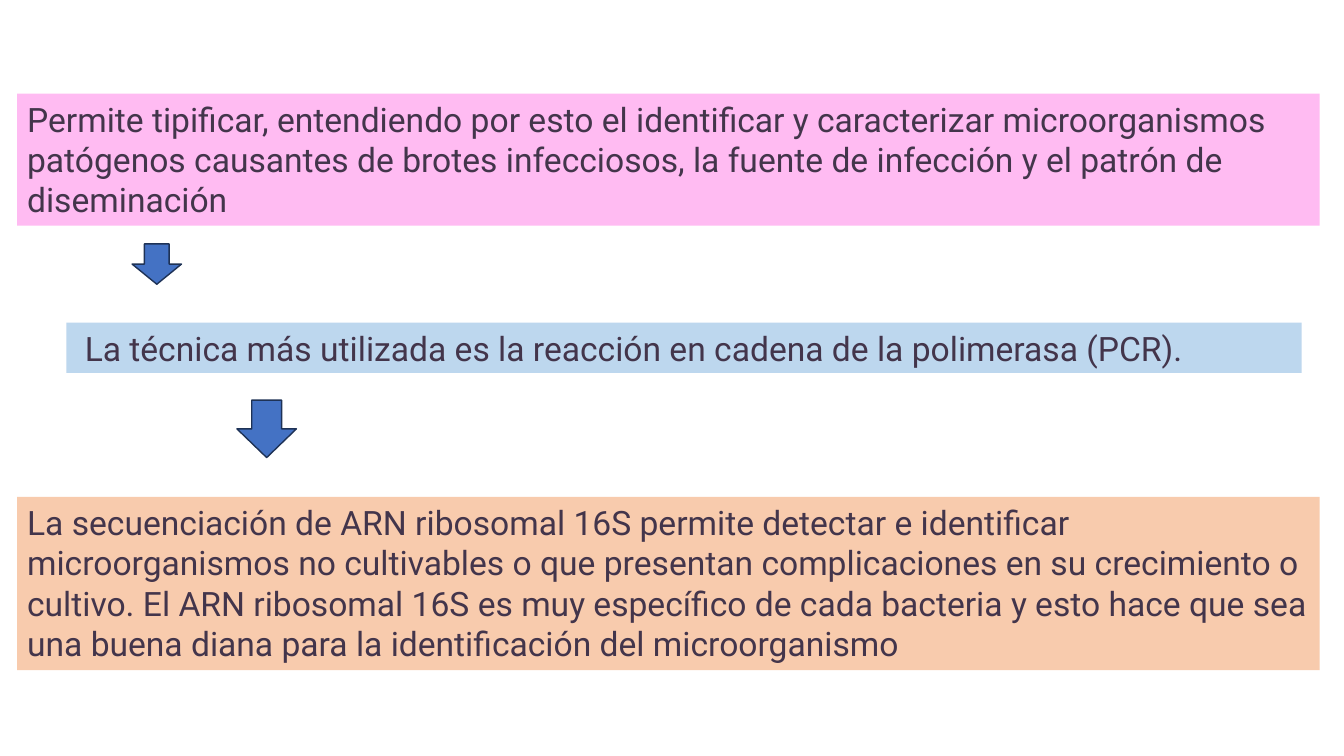
from dataclasses import dataclass

from pptx import Presentation
from pptx.dml.color import RGBColor
from pptx.enum.shapes import MSO_SHAPE
from pptx.enum.text import MSO_ANCHOR, MSO_AUTO_SIZE, PP_ALIGN
from pptx.util import Inches, Pt


@dataclass(frozen=True)
class Theme:
    pink: str = "FFBBF2"
    blue: str = "BDD7EE"
    peach: str = "F8CBAD"
    arrow: str = "4472C4"
    edge: str = "1E3256"
    ink: str = "43354B"
    font: str = "Roboto"
    size: int = 24


THEME = Theme()
WIDE, HIGH = Inches(13.33), Inches(7.5)
GRID = 100  # columns and rows across the slide

# Boxes as column, row, columns wide, rows high
STEPS = [
    ((1.28, 12.4, 96.92, 17.47), THEME.pink,
     "Permite tipificar, entendiendo por esto el identificar y caracterizar "
     "microorganismos patógenos causantes de brotes infecciosos, la fuente de "
     "infección y el patrón de diseminación"),
    ((4.95, 42.67, 91.9, 6.67), THEME.blue,
     " La técnica más utilizada es la reacción en cadena de la polimerasa (PCR)."),
    ((1.28, 65.73, 96.92, 22.93), THEME.peach,
     "La secuenciación de ARN ribosomal 16S permite detectar e identificar "
     "microorganismos no cultivables o que presentan complicaciones en su "
     "crecimiento o cultivo. El ARN ribosomal 16S es muy específico de cada "
     "bacteria y esto hace que sea una buena diana para la identificación del "
     "microorganismo"),
]
ARROWS = [(9.83, 32.27, 3.68, 5.33), (17.63, 52.93, 4.43, 7.6)]


def style(item, form):
    for name, value in form.items():
        setattr(item, name, value)


def shape(slide, kind, box, fill):
    col, row, wide, high = box
    part = slide.shapes.add_shape(
        kind, int(WIDE * col / GRID), int(HIGH * row / GRID),
        int(WIDE * wide / GRID), int(HIGH * high / GRID))
    part.shadow.inherit = False
    part.fill.solid()
    part.fill.fore_color.rgb = RGBColor.from_string(fill)
    return part


def step(slide, box, fill, text):
    part = shape(slide, MSO_SHAPE.RECTANGLE, box, fill)
    part.line.fill.background()
    frame = part.text_frame
    style(frame, {"word_wrap": True, "vertical_anchor": MSO_ANCHOR.TOP,
                  "auto_size": MSO_AUTO_SIZE.SHAPE_TO_FIT_TEXT})
    para = frame.paragraphs[0]
    para.alignment = PP_ALIGN.LEFT
    run = para.add_run()
    run.text = text
    style(run.font, {"name": THEME.font, "size": Pt(THEME.size)})
    run.font.color.rgb = RGBColor.from_string(THEME.ink)


def arrow(slide, box):
    part = shape(slide, MSO_SHAPE.DOWN_ARROW, box, THEME.arrow)
    part.line.color.rgb = RGBColor.from_string(THEME.edge)
    part.line.width = Pt(1)


def main():
    deck = Presentation()
    style(deck, {"slide_width": WIDE, "slide_height": HIGH})
    slide = deck.slides.add_slide(deck.slide_layouts[6])
    # Text bands
    for box, fill, text in STEPS:
        step(slide, box, fill, text)
    # Arrows between the bands
    for box in ARROWS:
        arrow(slide, box)
    deck.save("out.pptx")


if __name__ == "__main__":
    main()
